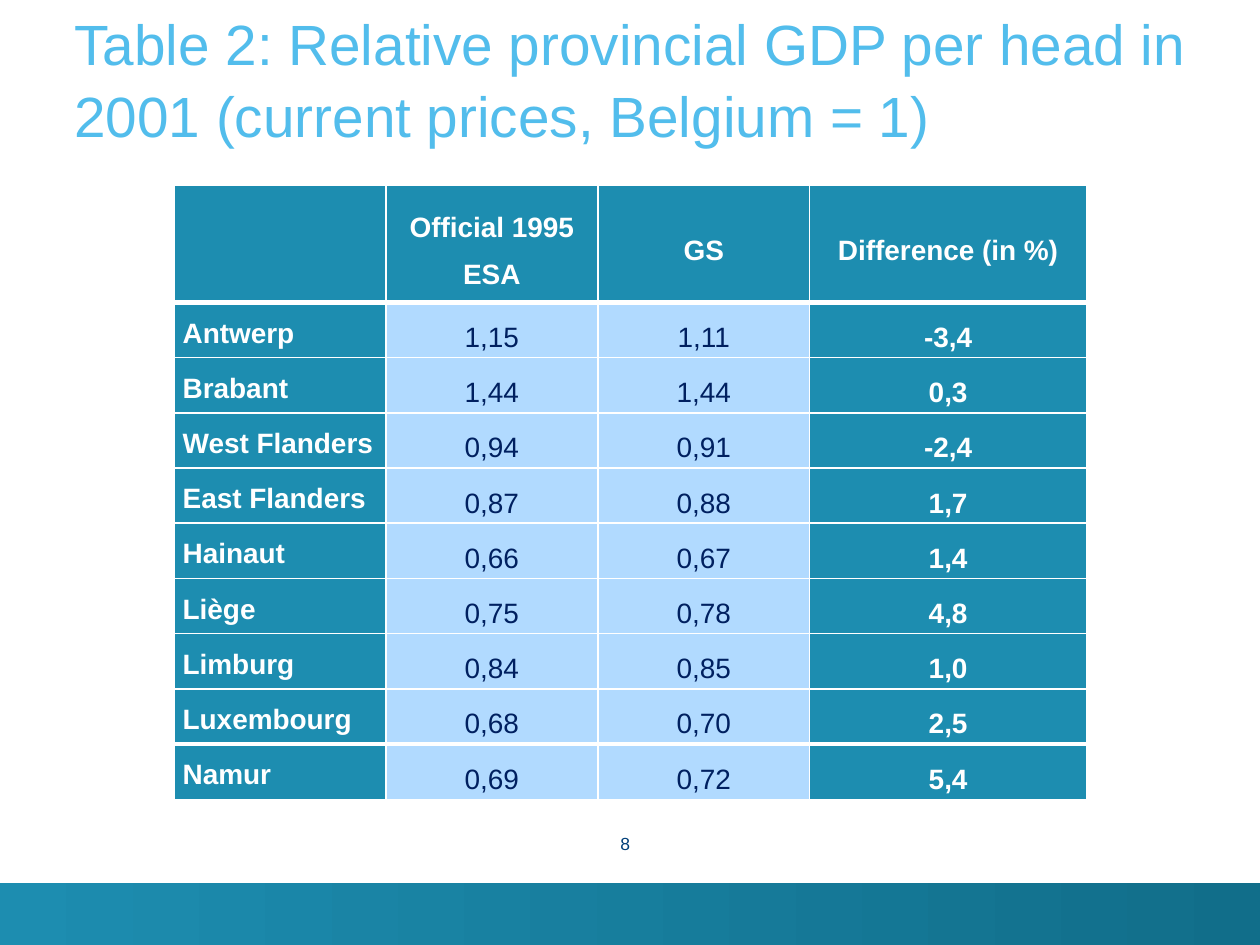
from lxml.etree import SubElement
from pptx import Presentation
from pptx.dml.color import RGBColor
from pptx.enum.shapes import MSO_SHAPE as Shape
from pptx.enum.text import MSO_ANCHOR as Anchor, PP_ALIGN as Align
from pptx.oxml.ns import qn
from pptx.util import Pt

TEAL = RGBColor(0x1D, 0x8D, 0xB0)
DEEP_TEAL = RGBColor(0x11, 0x6E, 0x8A)
SKY = RGBColor(0x52, 0xBD, 0xEC)
PALE_BLUE = RGBColor(0xB1, 0xDA, 0xFF)
NAVY = RGBColor(0x00, 0x20, 0x60)
PAGE_BLUE = RGBColor(0x00, 0x40, 0x7A)
WHITE = RGBColor(0xFF, 0xFF, 0xFF)


def write(frame, text, size, color, align, spacing=1.0, bold=False):
    para = frame.paragraphs[0]
    para.alignment = align
    para.line_spacing = spacing
    span = para.add_run()
    span.text = text
    for name, value in {"name": "Arial", "size": Pt(size), "bold": bold}.items():
        setattr(span.font, name, value)
    span.font.color.rgb = color


def add_borders(cell, top, bottom):
    properties = cell._tc.get_or_add_tcPr()
    widths = {"a:lnL": 1, "a:lnR": 1, "a:lnT": top, "a:lnB": bottom}
    for index, (tag, width) in enumerate(widths.items()):
        line = SubElement(properties, qn(tag), w=str(Pt(width)))
        SubElement(SubElement(line, qn("a:solidFill")), qn("a:srgbClr"), val=str(WHITE))
        properties.insert(index, line)


deck = Presentation()
deck.slide_width, deck.slide_height = Pt(720), Pt(540)
page = deck.slides.add_slide(deck.slide_layouts[6])

band = page.shapes.add_shape(Shape.RECTANGLE, Pt(0), Pt(504.7), Pt(720), Pt(38.2))
band.shadow.inherit = False
band.line.fill.background()
band.fill.gradient()
band.fill.gradient_angle = 0
for stop, color in zip(band.fill.gradient_stops, (TEAL, DEEP_TEAL)):
    stop.color.rgb = color

labels = [
    ("Table 2: Relative provincial GDP per head in 2001 (current prices, Belgium = 1)",
     (42.5, 14.4, 656, 70.6), 32.4, SKY, Align.LEFT, Anchor.BOTTOM, 1.05),
    ("8", (286.6, 475.9, 73.4, 22.3), 10, PAGE_BLUE, Align.RIGHT, Anchor.TOP, 1.0),
]
for text, place, size, color, align, anchor, spacing in labels:
    box = page.shapes.add_textbox(*map(Pt, place))
    frame_format = {"word_wrap": True, "vertical_anchor": anchor, "margin_left": 0,
                    "margin_right": 0, "margin_top": 0, "margin_bottom": 0}
    for name, value in frame_format.items():
        setattr(box.text_frame, name, value)
    write(box.text_frame, text, size, color, align, spacing)

rows = [
    ("", "Official 1995 ESA", "GS", "Difference (in %)"),
    ("Antwerp", "1,15", "1,11", "-3,4"),
    ("Brabant", "1,44", "1,44", "0,3"),
    ("West Flanders", "0,94", "0,91", "-2,4"),
    ("East Flanders", "0,87", "0,88", "1,7"),
    ("Hainaut", "0,66", "0,67", "1,4"),
    ("Liège", "0,75", "0,78", "4,8"),
    ("Limburg", "0,84", "0,85", "1,0"),
    ("Luxembourg", "0,68", "0,70", "2,5"),
    ("Namur", "0,69", "0,72", "5,4"),
]
column_widths = [121.1, 121.1, 121.1, 158.2]
row_heights = [67.2] + [31.55] * 9
last = len(rows) - 1

table = page.shapes.add_table(len(rows), len(column_widths), Pt(99.4), Pt(105.6),
                              Pt(sum(column_widths)), Pt(sum(row_heights))).table
for column, width in zip(table.columns, column_widths):
    column.width = Pt(width)
for row, height in zip(table.rows, row_heights):
    row.height = Pt(height)

for r, values in enumerate(rows):
    for c, text in enumerate(values):
        cell = table.cell(r, c)
        is_figure = r > 0 and c in (1, 2)
        is_province = r > 0 and c == 0
        cell_format = {"margin_left": Pt(5), "margin_right": Pt(5),
                       "margin_top": 0, "margin_bottom": 0,
                       "vertical_anchor": Anchor.TOP if is_province else Anchor.MIDDLE}
        for name, value in cell_format.items():
            setattr(cell, name, value)
        cell.fill.solid()
        cell.fill.fore_color.rgb = PALE_BLUE if is_figure else TEAL
        add_borders(cell, 3 if r in (1, last) else 1, 3 if r in (0, last - 1) else 1)
        if text:
            write(cell.text_frame, text, 16, NAVY if is_figure else WHITE,
                  Align.JUSTIFY if is_province else Align.CENTER, 1.5, not is_figure)

deck.save("out.pptx")
